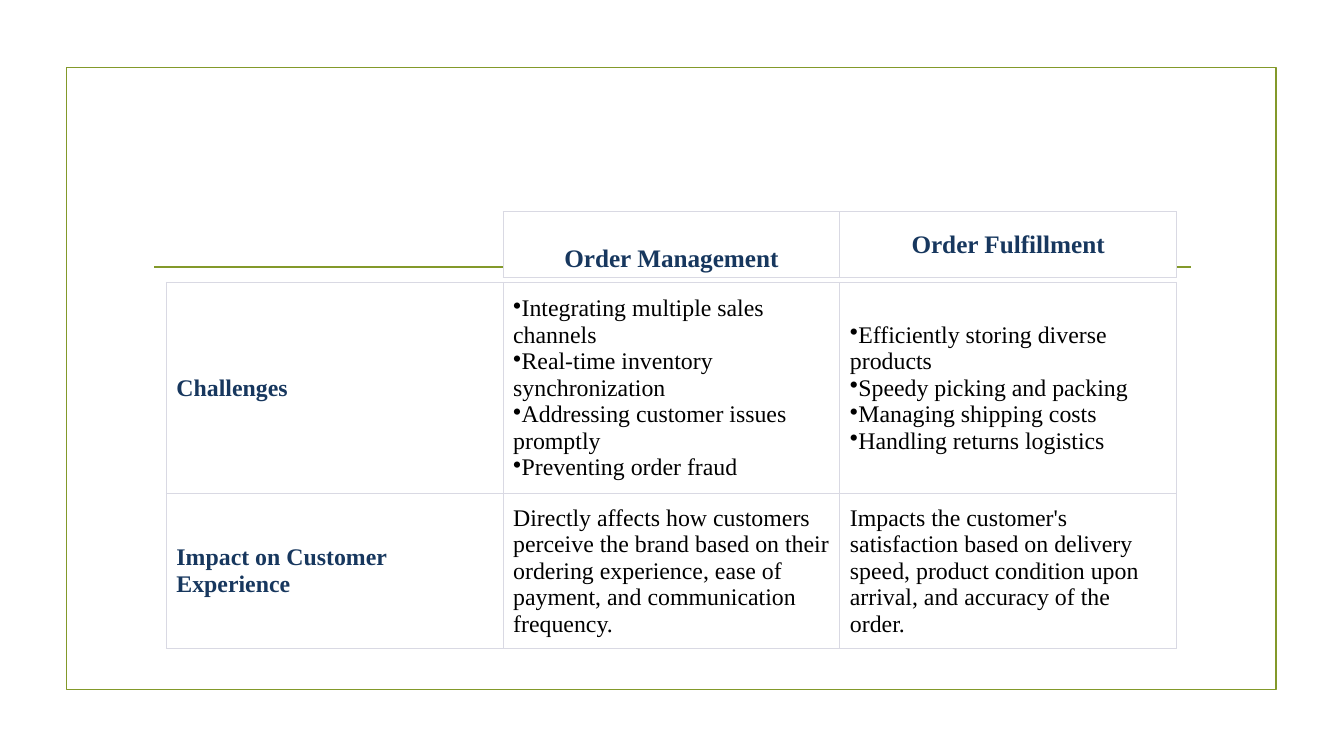
from dataclasses import dataclass

from lxml import etree
from pptx import Presentation
from pptx.dml.color import RGBColor
from pptx.enum.shapes import MSO_CONNECTOR, MSO_SHAPE
from pptx.enum.text import MSO_ANCHOR, PP_ALIGN
from pptx.oxml.ns import qn
from pptx.util import Inches, Pt

RECTANGLE = MSO_SHAPE.RECTANGLE
STRAIGHT = MSO_CONNECTOR.STRAIGHT
MIDDLE = MSO_ANCHOR.MIDDLE
CENTER, LEFT = PP_ALIGN.CENTER, PP_ALIGN.LEFT


@dataclass(frozen=True)
class Theme:
    font: str = "Times New Roman"
    olive: str = "83992A"
    navy: str = "17375E"
    black: str = "000000"
    white: str = "FFFFFF"
    grid: str = "D9D9E3"
    header_size: float = 18
    body_size: float = 17
    frame_width: float = 1.25
    grid_width: float = 0.75


THEME = Theme()
WIDTH, HEIGHT = 13.33, 7.5
COLUMN = 3.34
TABLE_LEFT = 1.65
HEADER_TOP, HEADER_HEIGHT = 2.1, 0.65
BODY_TOP, BODY_ROWS = 2.8, (2.1, 1.53)
# Extra top inset that sets the first heading lower than the second
HEADER_INSETS = (0.33, 0.05)

HEADINGS = ("Order Management", "Order Fulfillment")
COMPARISON = (
    (
        ("Challenges",),
        (
            "Integrating multiple sales channels",
            "Real-time inventory synchronization",
            "Addressing customer issues promptly",
            "Preventing order fraud",
        ),
        (
            "Efficiently storing diverse products",
            "Speedy picking and packing",
            "Managing shipping costs",
            "Handling returns logistics",
        ),
    ),
    (
        ("Impact on Customer Experience",),
        (
            "Directly affects how customers perceive the brand based on their "
            "ordering experience, ease of payment, and communication frequency.",
        ),
        (
            "Impacts the customer's satisfaction based on delivery speed, "
            "product condition upon arrival, and accuracy of the order.",
        ),
    ),
)


def rgb(color):
    return RGBColor.from_string(color)


def style_line(line):
    line.color.rgb = rgb(THEME.olive)
    line.width = Pt(THEME.frame_width)


def add_border(cell):
    properties = cell._tc.get_or_add_tcPr()
    for position, side in enumerate(("lnL", "lnR", "lnT", "lnB")):
        border = etree.Element(qn(f"a:{side}"), w=str(Pt(THEME.grid_width)))
        fill = etree.SubElement(border, qn("a:solidFill"))
        etree.SubElement(fill, qn("a:srgbClr"), val=THEME.grid)
        properties.insert(position, border)


def add_bullet(paragraph):
    properties = paragraph._p.get_or_add_pPr()
    properties.set("marL", "0")
    properties.set("indent", "0")
    etree.SubElement(properties, qn("a:buChar"), char="•")


def fill_cell(cell, lines, size, heading, align=LEFT):
    """Write one paragraph per line; several lines become a bulleted list."""
    cell.fill.solid()
    cell.fill.fore_color.rgb = rgb(THEME.white)
    add_border(cell)
    cell.vertical_anchor = MIDDLE
    cell.text_frame.text = "\n".join(lines)
    for paragraph in cell.text_frame.paragraphs:
        paragraph.alignment = align
        if len(lines) > 1:
            add_bullet(paragraph)
        for run in paragraph.runs:
            run.font.name = THEME.font
            run.font.size = Pt(size)
            run.font.bold = heading
            run.font.color.rgb = rgb(THEME.navy if heading else THEME.black)


def add_grid(slide, left, top, columns, row_heights):
    """Add a plain table with equal columns and the given rows."""
    table = slide.shapes.add_table(
        len(row_heights), columns, Inches(left), Inches(top),
        Inches(columns * COLUMN), Inches(sum(row_heights)),
    ).table
    table.first_row = table.horz_banding = False
    for column in table.columns:
        column.width = Inches(COLUMN)
    for row, height in zip(table.rows, row_heights):
        row.height = Inches(height)
    return table


def add_frame(slide, left, top, width, height):
    frame = slide.shapes.add_shape(
        RECTANGLE, Inches(left), Inches(top), Inches(width), Inches(height)
    )
    frame.shadow.inherit = False
    frame.fill.background()
    style_line(frame.line)


def add_rule(slide, left, right, y):
    rule = slide.shapes.add_connector(
        STRAIGHT, Inches(left), Inches(y), Inches(right), Inches(y)
    )
    style_line(rule.line)
    etree.SubElement(rule._element.spPr, qn("a:effectLst"))


def add_comparison(slide, left, top):
    table = add_grid(slide, left, top, len(COMPARISON[0]), BODY_ROWS)
    for row, topic in enumerate(COMPARISON):
        for column, lines in enumerate(topic):
            fill_cell(table.cell(row, column), lines, THEME.body_size, column == 0)


def add_headings(slide, left, top):
    table = add_grid(slide, left, top, len(HEADINGS), (HEADER_HEIGHT,))
    for column, (heading, inset) in enumerate(zip(HEADINGS, HEADER_INSETS)):
        cell = table.cell(0, column)
        fill_cell(cell, (heading,), THEME.header_size, True, CENTER)
        cell.margin_top = Inches(inset)


def main():
    presentation = Presentation()
    presentation.slide_width = Inches(WIDTH)
    presentation.slide_height = Inches(HEIGHT)
    slide = presentation.slides.add_slide(presentation.slide_layouts[6])
    add_frame(slide, 0.66, 0.67, 12, 6.17)
    add_rule(slide, 1.53, 11.81, 2.65)
    add_comparison(slide, TABLE_LEFT, BODY_TOP)
    add_headings(slide, TABLE_LEFT + COLUMN, HEADER_TOP)
    presentation.save("out.pptx")


if __name__ == "__main__":
    main()
